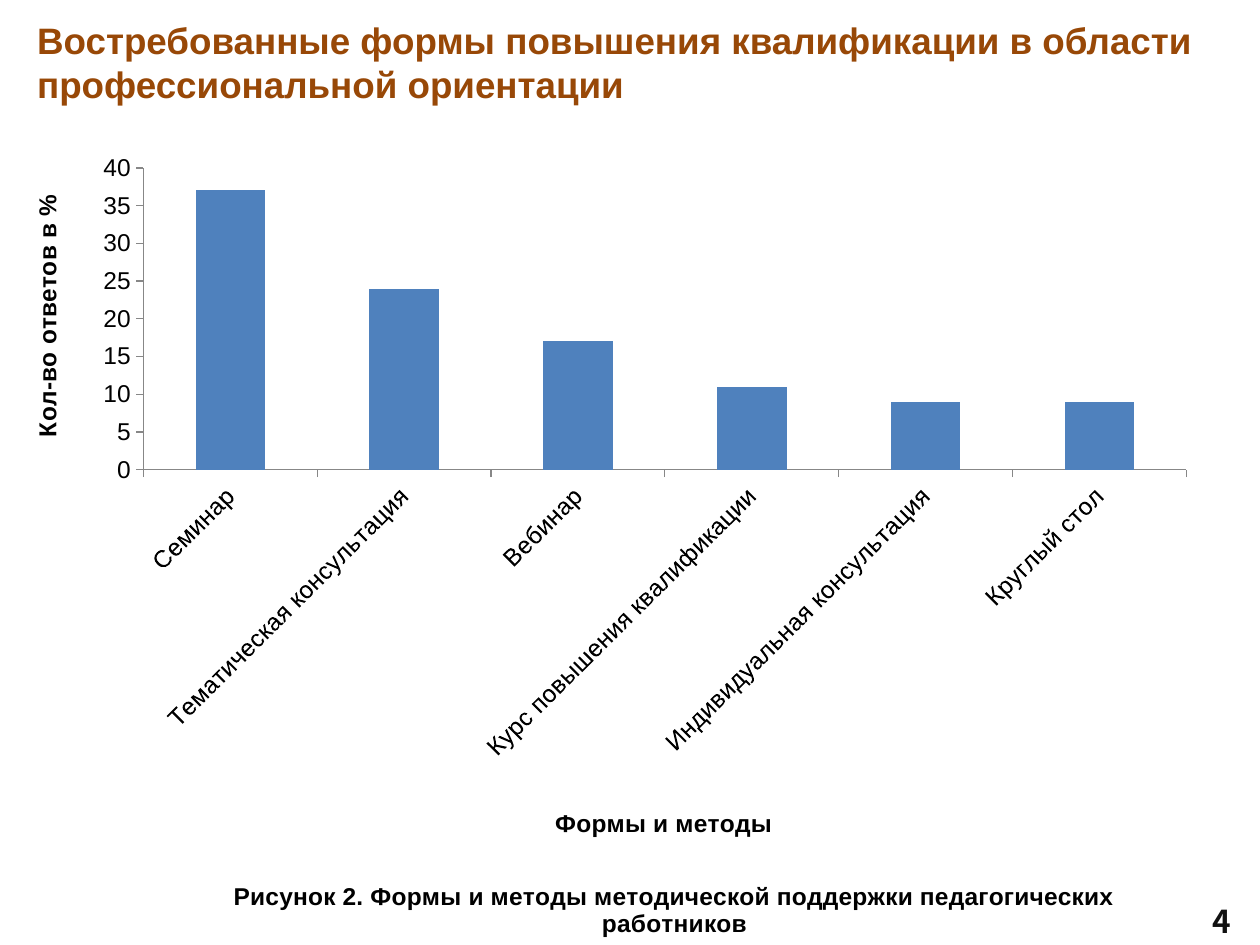
import pptx
import pptx.chart.data
import pptx.dml.color
import pptx.enum.chart
import pptx.enum.text
import pptx.oxml
import pptx.oxml.ns
import pptx.util
from pptx.util import Cm

# Content
HEADING = "Востребованные формы повышения квалификации в области профессиональной ориентации"
CAPTION = "Рисунок 2. Формы и методы методической поддержки педагогических работников"
METHODS_TITLE = "Формы и методы"
ANSWERS_TITLE = "Кол-во ответов в %"
PAGE_NUMBER = "4"
ANSWERS = {
    "Семинар": 37,
    "Тематическая консультация": 24,
    "Вебинар": 17,
    "Курс повышения квалификации": 11,
    "Индивидуальная консультация": 9,
    "Круглый стол": 9,
}
CHART_FONT = {"name": "Arial", "size": pptx.util.Pt(14)}
AXIS_FORMAT = {
    "major_tick_mark": pptx.enum.chart.XL_TICK_MARK.OUTSIDE,
    "minor_tick_mark": pptx.enum.chart.XL_TICK_MARK.NONE,
    "has_major_gridlines": False,
}


def color(value):
    return pptx.dml.color.RGBColor.from_string(value)


def style(font, hex_color, **values):
    for key, value in values.items():
        setattr(font, key, value)
    font.color.rgb = color(hex_color)


def add_text(slide, text, box, anchor, hex_color, **font):
    frame = slide.shapes.add_textbox(*map(Cm, box)).text_frame
    frame.word_wrap = True
    frame.vertical_anchor = anchor
    run = frame.paragraphs[0].add_run()
    run.text = text
    style(run.font, hex_color, **font)


def place(element, index, **fractions):
    """Give a chart part a manual layout in fractions of the chart."""
    for old in element.findall(pptx.oxml.ns.qn("c:layout")):
        element.remove(old)
    target = '<c:layoutTarget val="inner"/>' if "w" in fractions else ""
    modes = "".join(f'<c:{key}Mode val="edge"/>' for key in "xy")
    sizes = "".join(f'<c:{key} val="{value}"/>' for key, value in fractions.items())
    element.insert(index, pptx.oxml.parse_xml(
        f'<c:layout {pptx.oxml.ns.nsdecls("c")}><c:manualLayout>'
        f"{target}{modes}{sizes}</c:manualLayout></c:layout>"))


def add_title(owner, title_name, text, x, y):
    title = getattr(owner, title_name)
    paragraph = title.text_frame.paragraphs[0]
    run = paragraph.add_run()
    run.text = text
    style(run.font, "000000", bold=True, **CHART_FONT)
    place(title._element, 1, x=x, y=y)
    return title


def rotate(body, degrees):
    body.set("rot", str(degrees * 60000))
    body.set("vert", "horz")


deck = pptx.Presentation()
deck.slide_width, deck.slide_height = Cm(25.4), Cm(19.05)
slide = deck.slides.add_slide(deck.slide_layouts[6])

# Heading
add_text(slide, HEADING, (0.5, 0, 23.9, 2.5), pptx.enum.text.MSO_ANCHOR.MIDDLE,
         "984807", name="Arial", size=pptx.util.Pt(21), bold=True)

# Column chart
data = pptx.chart.data.CategoryChartData()
data.categories = list(ANSWERS)
data.add_series("Series 1", list(ANSWERS.values()))
chart = slide.shapes.add_chart(
    pptx.enum.chart.XL_CHART_TYPE.COLUMN_CLUSTERED,
    Cm(0.3), Cm(2.72), Cm(24), Cm(16.33), data).chart
style(chart.font, "000000", name="Noto Sans CJK KR", size=pptx.util.Pt(18))
chart.has_legend = False
place(chart._chartSpace.chart.plotArea, 0, x=0.108, y=0.041, w=0.876, h=0.375)
plot = chart.plots[0]
plot.gap_width = 150
plot.vary_by_categories = False
bars = plot.series[0].format.fill
bars.solid()
bars.fore_color.rgb = color("4F81BD")

# Axes
for axis in (chart.category_axis, chart.value_axis):
    for key, value in AXIS_FORMAT.items():
        setattr(axis, key, value)
    axis.format.line.color.rgb = color("878787")
    axis.format.line.width = pptx.util.Pt(0.75)
    style(axis.tick_labels.font, "000000", **CHART_FONT)
chart.value_axis.minimum_scale = 0
chart.value_axis.maximum_scale = 40
chart.value_axis.major_unit = 5
rotate(chart.category_axis._element.txPr.bodyPr, -45)

# Chart and axis titles
caption = add_title(chart, "chart_title", CAPTION, 0.18, 0.92)
caption._element.find(pptx.oxml.ns.qn("c:overlay")).set("val", "1")
add_title(chart.category_axis, "axis_title", METHODS_TITLE, 0.45, 0.83)
answers_title = add_title(chart.value_axis, "axis_title", ANSWERS_TITLE, 0.01, 0.07)
rotate(answers_title.text_frame._txBody.bodyPr, -90)

# Page number
add_text(slide, PAGE_NUMBER, (24.2, 18.05, 1.2, 1), pptx.enum.text.MSO_ANCHOR.TOP,
         "111111", name="Noto Sans CJK KR", size=pptx.util.Pt(18), bold=True)

deck.save("out.pptx")
